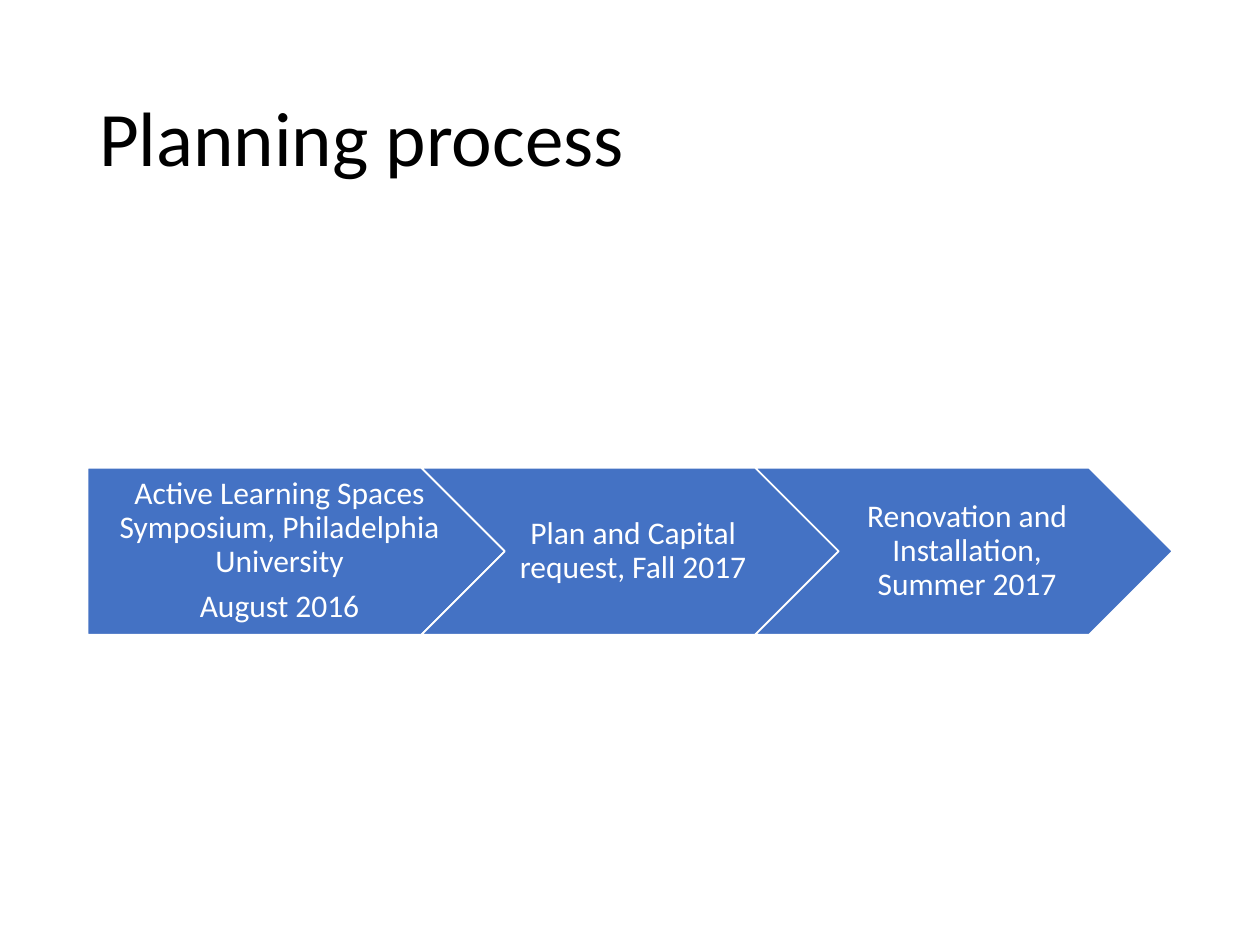
import pptx
import pptx.util
import pptx.dml.color
import pptx.enum.shapes
import pptx.enum.text

Pt = pptx.util.Pt
RGB = pptx.dml.color.RGBColor
SHAPE = pptx.enum.shapes.MSO_SHAPE
ALIGN = pptx.enum.text.PP_ALIGN
MIDDLE = pptx.enum.text.MSO_ANCHOR.MIDDLE

# Content
TITLE = "Planning process"
STEPS = [
    ["Active Learning Spaces Symposium, Philadelphia University", "August 2016"],
    ["Plan and Capital request, Fall 2017"],
    ["Renovation and Installation, Summer 2017"],
]

# Look, lengths in points
FONT = "Calibri"
BLACK = RGB(0x00, 0x00, 0x00)
WHITE = RGB(0xFF, 0xFF, 0xFF)
BLUE = RGB(0x44, 0x72, 0xC4)
LEFT, TOP = 50, 267.3
WIDE, HIGH = 238.5, 95.4
PITCH = WIDE * 0.8


def put_text(shape, lines, size, color, align, after=0, inset=(7.2, 3.6, 7.2, 3.6)):
    frame = shape.text_frame
    frame.word_wrap = True
    frame.auto_size = pptx.enum.text.MSO_AUTO_SIZE.NONE
    frame.vertical_anchor = MIDDLE
    (frame.margin_left, frame.margin_top,
     frame.margin_right, frame.margin_bottom) = map(Pt, inset)
    frame.text = "\n".join(lines)
    for para in frame.paragraphs:
        para.alignment = align
        para.line_spacing = 0.9
        para.space_before = Pt(0)
        para.space_after = Pt(after)
        font = para.runs[0].font
        font.name, font.size = FONT, Pt(size)
        font.color.rgb = color


def main():
    deck = pptx.Presentation()
    deck.slide_width, deck.slide_height = Pt(720), Pt(540)
    slide = deck.slides.add_slide(deck.slide_layouts[5])

    # Title
    title = slide.shapes.title
    title.left, title.top = Pt(49.5), Pt(28.75)
    title.width, title.height = Pt(621), Pt(104.4)
    put_text(title, [TITLE], size=44, color=BLACK, align=ALIGN.LEFT)

    # Row of arrow steps
    for i, lines in enumerate(STEPS):
        kind = SHAPE.CHEVRON if i else SHAPE.PENTAGON
        step = slide.shapes.add_shape(
            kind, Pt(LEFT + i * PITCH), Pt(TOP), Pt(WIDE), Pt(HIGH))
        step.shadow.inherit = False
        step.fill.solid()
        step.fill.fore_color.rgb = BLUE
        step.line.color.rgb = WHITE
        step.line.width = Pt(1)
        put_text(step, lines, size=18, color=WHITE, align=ALIGN.CENTER,
                 after=6.3, inset=(5.76 if i else 7.2, 3.6, 2.16, 3.6))

    deck.save("out.pptx")


if __name__ == "__main__":
    main()
